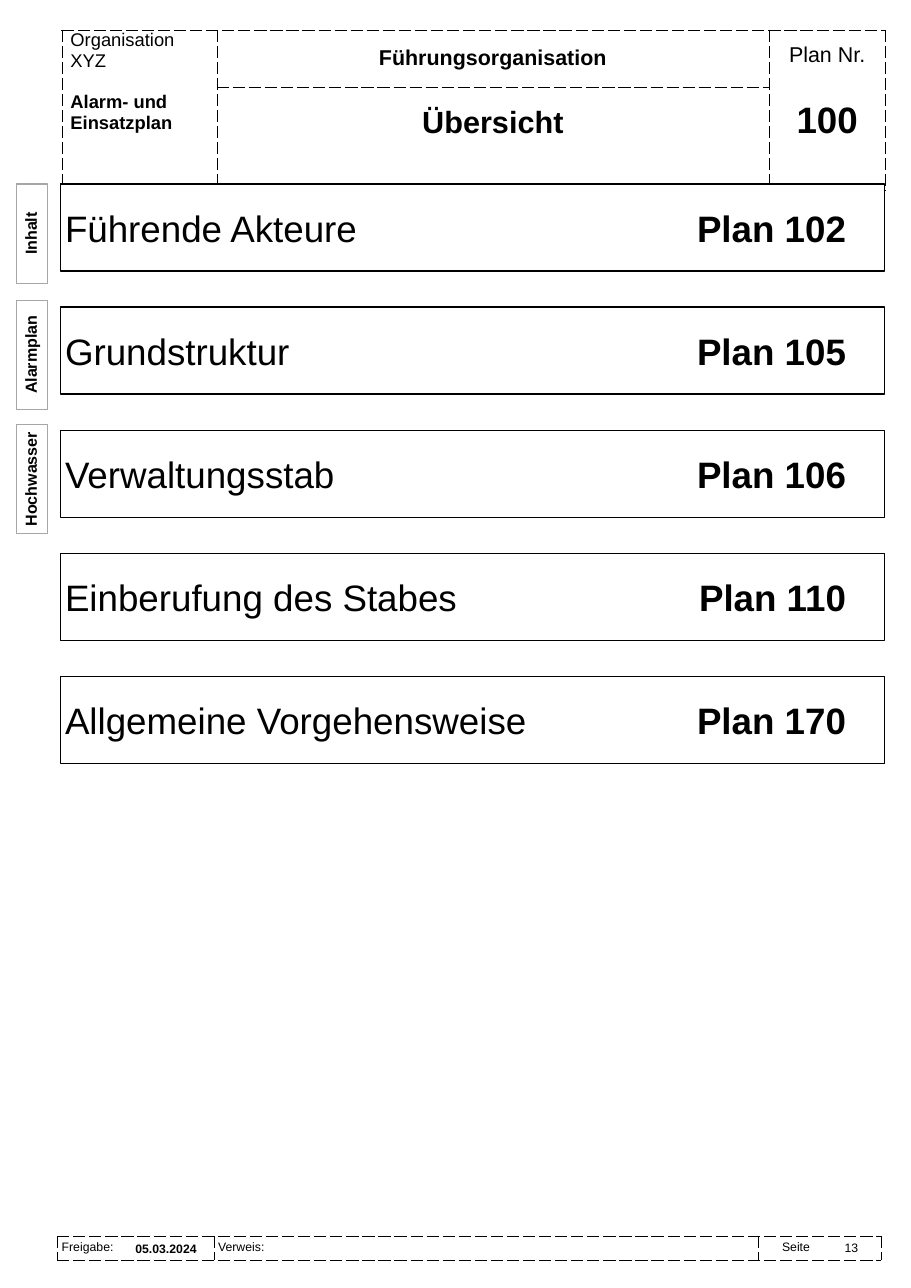
from dataclasses import dataclass

from lxml import etree
from pptx import Presentation
from pptx import util as u
from pptx.dml.color import RGBColor
from pptx.enum import shapes, text
from pptx.oxml.ns import qn


@dataclass(frozen=True)
class Theme:
    """Colours, font and type sizes of the plan sheet."""
    font: str = "Arial"
    ink: str = "000000"
    paper: str = "FFFFFF"
    tab_line: str = "A6A6A6"
    tiny: float = 8
    tab: float = 10.5
    label: float = 12
    heading: float = 14
    title: float = 20
    large: float = 24


THEME = Theme()
LEFT, CENTER, RIGHT = text.PP_ALIGN.LEFT, text.PP_ALIGN.CENTER, text.PP_ALIGN.RIGHT
TOP, MIDDLE = text.MSO_ANCHOR.TOP, text.MSO_ANCHOR.MIDDLE


def add_run(paragraph, words, size, bold=False):
    """Append one run in the theme font."""
    run = paragraph.add_run()
    run.text = words
    run.font.name = THEME.font
    run.font.size = u.Pt(size)
    run.font.bold = bold
    run.font.color.rgb = RGBColor.from_string(THEME.ink)


def set_margins(holder, left, top, right, bottom):
    """Set the inner margins of a text frame or table cell."""
    holder.margin_left, holder.margin_top = u.Inches(left), u.Inches(top)
    holder.margin_right, holder.margin_bottom = u.Inches(right), u.Inches(bottom)


def prepare_frame(frame, margins, anchor, align):
    """Set up a wrapping text frame and return its first paragraph."""
    frame.word_wrap = True
    frame.vertical_anchor = anchor
    set_margins(frame, *margins)
    paragraph = frame.paragraphs[0]
    paragraph.alignment = align
    return paragraph


def add_label(slide, box, words, size, bold=False, align=CENTER,
              margins=(0.04, 0, 0.04, 0), anchor=MIDDLE, spacing=1.0):
    """Place a single-line text box."""
    frame = slide.shapes.add_textbox(*map(u.Inches, box)).text_frame
    paragraph = prepare_frame(frame, margins, anchor, align)
    paragraph.line_spacing = spacing
    add_run(paragraph, words, size, bold)


def add_panel(slide, box, line_colour, line_width):
    """Place a white outlined rectangle."""
    panel = slide.shapes.add_shape(shapes.MSO_SHAPE.RECTANGLE, *map(u.Inches, box))
    panel.shadow.inherit = False
    panel.fill.solid()
    panel.fill.fore_color.rgb = RGBColor.from_string(THEME.paper)
    panel.line.color.rgb = RGBColor.from_string(line_colour)
    panel.line.width = u.Pt(line_width)
    return panel


def dash_borders(cell):
    """Give a cell thin dashed borders on all sides."""
    properties = cell._tc.get_or_add_tcPr()
    for side in ("a:lnL", "a:lnR", "a:lnT", "a:lnB"):
        line = etree.SubElement(properties, qn(side), w=str(u.Pt(0.25)))
        fill = etree.SubElement(line, qn("a:solidFill"))
        etree.SubElement(fill, qn("a:srgbClr"), val=THEME.ink)
        etree.SubElement(line, qn("a:prstDash"), val="sysDash")


def add_grid(slide, left, top, widths, heights, merged=()):
    """Place a dashed table, merging the given columns from top to bottom."""
    frame = slide.shapes.add_table(
        len(heights), len(widths), u.Inches(left), u.Inches(top),
        u.Inches(sum(widths)), u.Inches(sum(heights)))
    table = frame.table
    table.first_row = table.horz_banding = False
    for column, width in zip(table.columns, widths):
        column.width = u.Inches(width)
    for row, height in zip(table.rows, heights):
        row.height = u.Inches(height)
    for column in merged:
        table.cell(0, column).merge(table.cell(len(heights) - 1, column))
    for cell in table.iter_cells():
        if not cell.is_spanned:
            dash_borders(cell)
        cell.fill.background()
    return table


def add_header(slide, left, top):
    """Build the header grid with organisation, title and plan number."""
    widths, heights = (1.41, 5.01, 1.06), (0.52, 0.88)
    table = add_grid(slide, left, top, widths, heights, merged=(0, 2))
    organisation, number = table.cell(0, 0), table.cell(0, 2)
    set_margins(organisation, 0.08, 0, 0.08, 0)
    lines = (("Organisation", False), ("XYZ", False),
             ("Alarm- und", True), ("Einsatzplan", True))
    frame = organisation.text_frame
    for index, (words, bold) in enumerate(lines):
        paragraph = frame.add_paragraph() if index else frame.paragraphs[0]
        add_run(paragraph, words, THEME.label, bold)
    frame.paragraphs[2].space_before = u.Pt(13.8)

    set_margins(number, 0.08, 0.12, 0.08, 0)
    paragraph = number.text_frame.paragraphs[0]
    paragraph.alignment = CENTER
    add_run(paragraph, "Plan Nr.", THEME.heading)

    middle = left + widths[0]
    lower = top + heights[0] - 0.01
    add_label(slide, (middle, top, widths[1], 0.53), "Führungsorganisation",
              THEME.heading, True, spacing=0.9)
    add_label(slide, (middle, lower, widths[1], 0.65), "Übersicht", THEME.title, True)
    add_label(slide, (middle + widths[1], lower, widths[2], 0.65), "100",
              THEME.large, True, margins=(0, 0, 0, 0), spacing=0.9)


def add_plan_list(slide, left, top, width, bottom, plans):
    """Stack the plan cards evenly between top and bottom."""
    height = 0.79
    pitch = (bottom - height - top) / (len(plans) - 1)
    for index, (name, number) in enumerate(plans):
        card = add_panel(slide, (left, top + index * pitch, width, height), THEME.ink, 1)
        paragraph = prepare_frame(card.text_frame, (0.04, 0.05, 0.04, 0.05), MIDDLE, LEFT)
        stops = etree.SubElement(paragraph._p.get_or_add_pPr(), qn("a:tabLst"))
        etree.SubElement(stops, qn("a:tab"), pos=str(u.Inches(7.09)), algn="r")
        add_run(paragraph, name + "\t", THEME.large)
        add_run(paragraph, f"Plan {number}", THEME.large, True)


def add_side_tabs(slide, center_x, tabs):
    """Place the upright register tabs around a vertical axis."""
    depth = 0.28
    for words, center_y, length in tabs:
        box = (center_x - length / 2, center_y - depth / 2, length, depth)
        tab = add_panel(slide, box, THEME.tab_line, 0.75)
        tab.rotation = 270
        paragraph = prepare_frame(tab.text_frame, (0, 0.04, 0, 0.04), TOP, CENTER)
        add_run(paragraph, words, THEME.tab, True)


def add_footer(slide, left, top):
    """Build the footer grid with release date, reference and page."""
    table = add_grid(slide, left, top, (1.42, 4.94, 1.12), (0.21,))
    entries = (("Freigabe:", 0.04), ("Verweis:", 0.04), ("Seite", 0.22))
    for cell, (words, indent) in zip(table.iter_cells(), entries):
        set_margins(cell, indent, 0.04, 0.04, 0.04)
        add_run(cell.text_frame.paragraphs[0], words, THEME.tiny)
    add_label(slide, (left + 0.61, top + 0.01, 0.81, 0.2), "05.03.2024", THEME.tiny,
              True, LEFT, margins=(0.1, 0, 0.1, 0))
    add_label(slide, (left + 6.9, top + 0.04, 0.45, 0.13), "13", THEME.tiny,
              align=RIGHT, margins=(0.08, 0, 0.08, 0), anchor=TOP)


def main():
    """Create the plan overview sheet."""
    presentation = Presentation()
    presentation.slide_width, presentation.slide_height = u.Inches(8.27), u.Inches(11.69)
    slide = presentation.slides.add_slide(presentation.slide_layouts[6])
    add_header(slide, 0.56, 0.27)
    add_footer(slide, 0.52, 11.22)
    add_plan_list(slide, 0.55, 1.67, 7.48, 6.93, (
        ("Führende Akteure", 102), ("Grundstruktur", 105), ("Verwaltungsstab", 106),
        ("Einberufung des Stabes", 110), ("Allgemeine Vorgehensweise", 170)))
    add_side_tabs(slide, 0.29, (
        ("Inhalt", 2.12, 0.9), ("Alarmplan", 3.22, 0.99), ("Hochwasser", 4.35, 0.99)))
    presentation.save("out.pptx")


if __name__ == "__main__":
    main()
